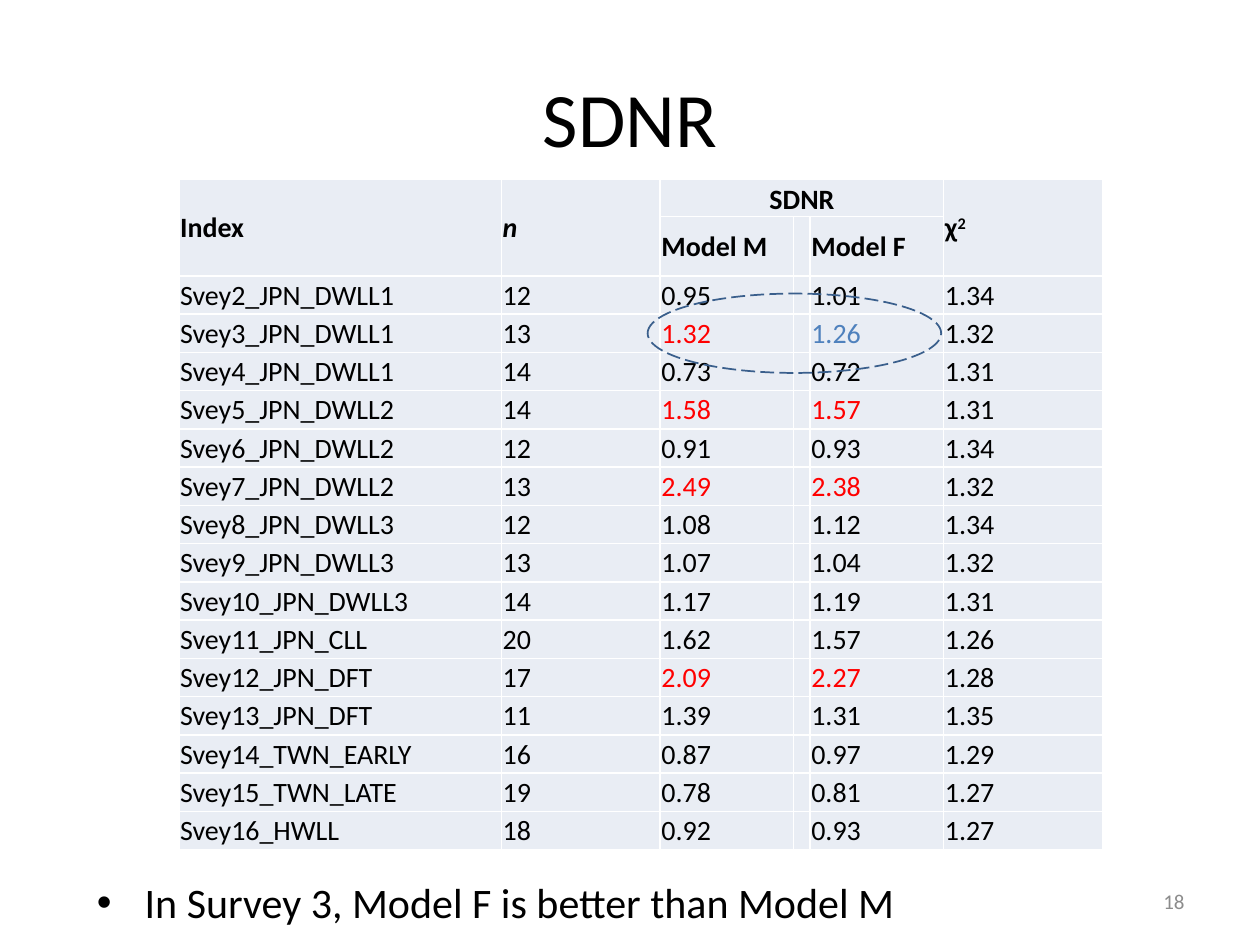
from dataclasses import dataclass

from lxml import etree
from pptx import Presentation
from pptx.dml.color import RGBColor
from pptx.enum.dml import MSO_LINE
from pptx.enum.shapes import MSO_SHAPE
from pptx.enum.text import MSO_ANCHOR, MSO_AUTO_SIZE, PP_ALIGN
from pptx.oxml.ns import qn
from pptx.util import Inches, Pt

LEFT, CENTER, RIGHT = PP_ALIGN.LEFT, PP_ALIGN.CENTER, PP_ALIGN.RIGHT
MIDDLE, BOTTOM = MSO_ANCHOR.MIDDLE, MSO_ANCHOR.BOTTOM
ELLIPSE, LONG_DASH = MSO_SHAPE.OVAL, MSO_LINE.LONG_DASH
FIT_SHAPE = MSO_AUTO_SIZE.SHAPE_TO_FIT_TEXT

SLIDE_WIDTH, SLIDE_HEIGHT = Inches(10), Inches(7.5)
TITLE_ONLY = 5
FONT = "Calibri"
BLACK, RED, BLUE, GRAY, WHITE = "000000", "FF0000", "4F81BD", "8C8C8C", "FFFFFF"
CELL_FILL, OUTLINE = "E9EDF4", "3A5F8C"

COLUMN_SHARES = [25.6, 12.6, 10.6, 1.3, 10.6, 12.6]
HEADER_SHARES = [4, 6.27]
SURVEY_SHARE = 4.05
INDEX, COUNT, MODEL_M, GAP, MODEL_F, CHI = range(6)
CELL_FORMAT = {
    "margin_left": Inches(0.01),
    "margin_right": Inches(0.01),
    "margin_top": Inches(0.01),
    "margin_bottom": 0,
    "vertical_anchor": MIDDLE,
}


@dataclass
class Box:
    left: float
    top: float
    width: float
    height: float

    def lengths(self) -> tuple:
        return across(self.left), down(self.top), across(self.width), down(self.height)


@dataclass
class Survey:
    index: str
    count: int
    model_m: str
    model_f: str
    chi: str
    color_m: str = BLACK
    color_f: str = BLACK


SURVEYS = [
    Survey("Svey2_JPN_DWLL1", 12, "0.95", "1.01", "1.34"),
    Survey("Svey3_JPN_DWLL1", 13, "1.32", "1.26", "1.32", RED, BLUE),
    Survey("Svey4_JPN_DWLL1", 14, "0.73", "0.72", "1.31"),
    Survey("Svey5_JPN_DWLL2", 14, "1.58", "1.57", "1.31", RED, RED),
    Survey("Svey6_JPN_DWLL2", 12, "0.91", "0.93", "1.34"),
    Survey("Svey7_JPN_DWLL2", 13, "2.49", "2.38", "1.32", RED, RED),
    Survey("Svey8_JPN_DWLL3", 12, "1.08", "1.12", "1.34"),
    Survey("Svey9_JPN_DWLL3", 13, "1.07", "1.04", "1.32"),
    Survey("Svey10_JPN_DWLL3", 14, "1.17", "1.19", "1.31"),
    Survey("Svey11_JPN_CLL", 20, "1.62", "1.57", "1.26"),
    Survey("Svey12_JPN_DFT", 17, "2.09", "2.27", "1.28", RED, RED),
    Survey("Svey13_JPN_DFT", 11, "1.39", "1.31", "1.35"),
    Survey("Svey14_TWN_EARLY", 16, "0.87", "0.97", "1.29"),
    Survey("Svey15_TWN_LATE", 19, "0.78", "0.81", "1.27"),
    Survey("Svey16_HWLL", 18, "0.92", "0.93", "1.27"),
]


def across(share: float) -> int:
    return round(SLIDE_WIDTH * share / 100)


def down(share: float) -> int:
    return round(SLIDE_HEIGHT * share / 100)


def rgb(color: str) -> RGBColor:
    return RGBColor.from_string(color)


def write(paragraph, text: str, size: float, color: str = BLACK, align=LEFT, **styles):
    paragraph.alignment = align
    run = paragraph.add_run()
    run.text = text
    run.font.color.rgb = rgb(color)
    for name, value in {"name": FONT, "size": Pt(size), **styles}.items():
        setattr(run.font, name, value)
    return run


def style_cell(cell) -> None:
    properties = cell._tc.get_or_add_tcPr()
    for side in ("a:lnL", "a:lnR", "a:lnT", "a:lnB"):
        border = etree.SubElement(properties, qn(side), w=str(Pt(1)))
        fill = etree.SubElement(border, qn("a:solidFill"))
        etree.SubElement(fill, qn("a:srgbClr"), val=WHITE)
    cell.fill.solid()
    cell.fill.fore_color.rgb = rgb(CELL_FILL)
    for name, value in CELL_FORMAT.items():
        setattr(cell, name, value)


def fill_cell(cell, text: str, color: str = BLACK, align=LEFT, **styles) -> None:
    write(cell.text_frame.paragraphs[0], text, 16, color, align, **styles)


def add_sdnr_table(slide, box: Box) -> None:
    row_shares = HEADER_SHARES + [SURVEY_SHARE] * len(SURVEYS)
    frame = slide.shapes.add_table(len(row_shares), len(COLUMN_SHARES), *box.lengths())
    table = frame.table
    table.first_row = table.horz_banding = False
    for column, share in zip(table.columns, COLUMN_SHARES):
        column.width = across(share)
    for row, share in zip(table.rows, row_shares):
        row.height = down(share)
    for cell in table.iter_cells():
        style_cell(cell)

    for column in (INDEX, COUNT, CHI):
        table.cell(0, column).merge(table.cell(1, column))
    table.cell(0, MODEL_M).merge(table.cell(0, MODEL_F))
    fill_cell(table.cell(0, INDEX), "Index", bold=True)
    fill_cell(table.cell(0, COUNT), "n", bold=True, italic=True)
    fill_cell(table.cell(0, MODEL_M), "SDNR", align=CENTER, bold=True)
    table.cell(0, MODEL_M).vertical_anchor = BOTTOM
    fill_cell(table.cell(0, CHI), "χ", bold=True)
    power = write(table.cell(0, CHI).text_frame.paragraphs[0], "2", 16, bold=True)
    power.font._element.set("baseline", "30000")
    fill_cell(table.cell(1, MODEL_M), "Model M", bold=True)
    fill_cell(table.cell(1, MODEL_F), "Model F", bold=True)

    for row, survey in enumerate(SURVEYS, start=len(HEADER_SHARES)):
        fill_cell(table.cell(row, INDEX), survey.index)
        fill_cell(table.cell(row, COUNT), str(survey.count))
        fill_cell(table.cell(row, MODEL_M), survey.model_m, survey.color_m)
        fill_cell(table.cell(row, MODEL_F), survey.model_f, survey.color_f)
        fill_cell(table.cell(row, CHI), survey.chi)

    for cell in table.iter_cells():
        paragraph = cell.text_frame.paragraphs[0]
        if not paragraph.runs:
            etree.SubElement(paragraph._p, qn("a:endParaRPr"), sz="1600")


def add_highlight(slide, box: Box) -> None:
    highlight = slide.shapes.add_shape(ELLIPSE, *box.lengths())
    highlight.shadow.inherit = False
    highlight.fill.background()
    highlight.line.color.rgb = rgb(OUTLINE)
    highlight.line.width = Pt(1)
    highlight.line.dash_style = LONG_DASH


def add_finding(slide, box: Box, text: str) -> None:
    frame = slide.shapes.add_textbox(*box.lengths()).text_frame
    frame.word_wrap = False
    frame.auto_size = FIT_SHAPE
    paragraph = frame.paragraphs[0]
    write(paragraph, text, 24)
    properties = paragraph._p.get_or_add_pPr()
    indent = Inches(0.38)
    properties.set("marL", str(indent))
    properties.set("indent", str(-indent))
    etree.SubElement(properties, qn("a:buFont"), typeface="Arial")
    etree.SubElement(properties, qn("a:buChar"), char="•")


def add_page_number(slide, box: Box, number: str) -> None:
    frame = slide.shapes.add_textbox(*box.lengths()).text_frame
    frame.word_wrap = True
    frame.vertical_anchor = MIDDLE
    write(frame.paragraphs[0], number, 12, GRAY, RIGHT)


def place_title(slide, box: Box, text: str) -> None:
    title = slide.shapes.title
    title.left, title.top, title.width, title.height = box.lengths()
    title.text_frame.vertical_anchor = MIDDLE
    write(title.text_frame.paragraphs[0], text, 44, align=CENTER)


def main() -> None:
    deck = Presentation()
    deck.slide_width, deck.slide_height = SLIDE_WIDTH, SLIDE_HEIGHT
    slide = deck.slides.add_slide(deck.slide_layouts[TITLE_ONLY])
    place_title(slide, Box(5, 4, 90, 16.67), "SDNR")
    add_sdnr_table(slide, Box(14.2, 18.93, 73.3, 71.07))
    add_highlight(slide, Box(51.4, 31.07, 23.3, 8.4))
    add_finding(slide, Box(6.7, 92.13, 65.9, 6.67), "In Survey 3, Model F is better than Model M")
    add_page_number(slide, Box(71.7, 92.67, 23.3, 5.33), "18")
    deck.save("out.pptx")


if __name__ == "__main__":
    main()
